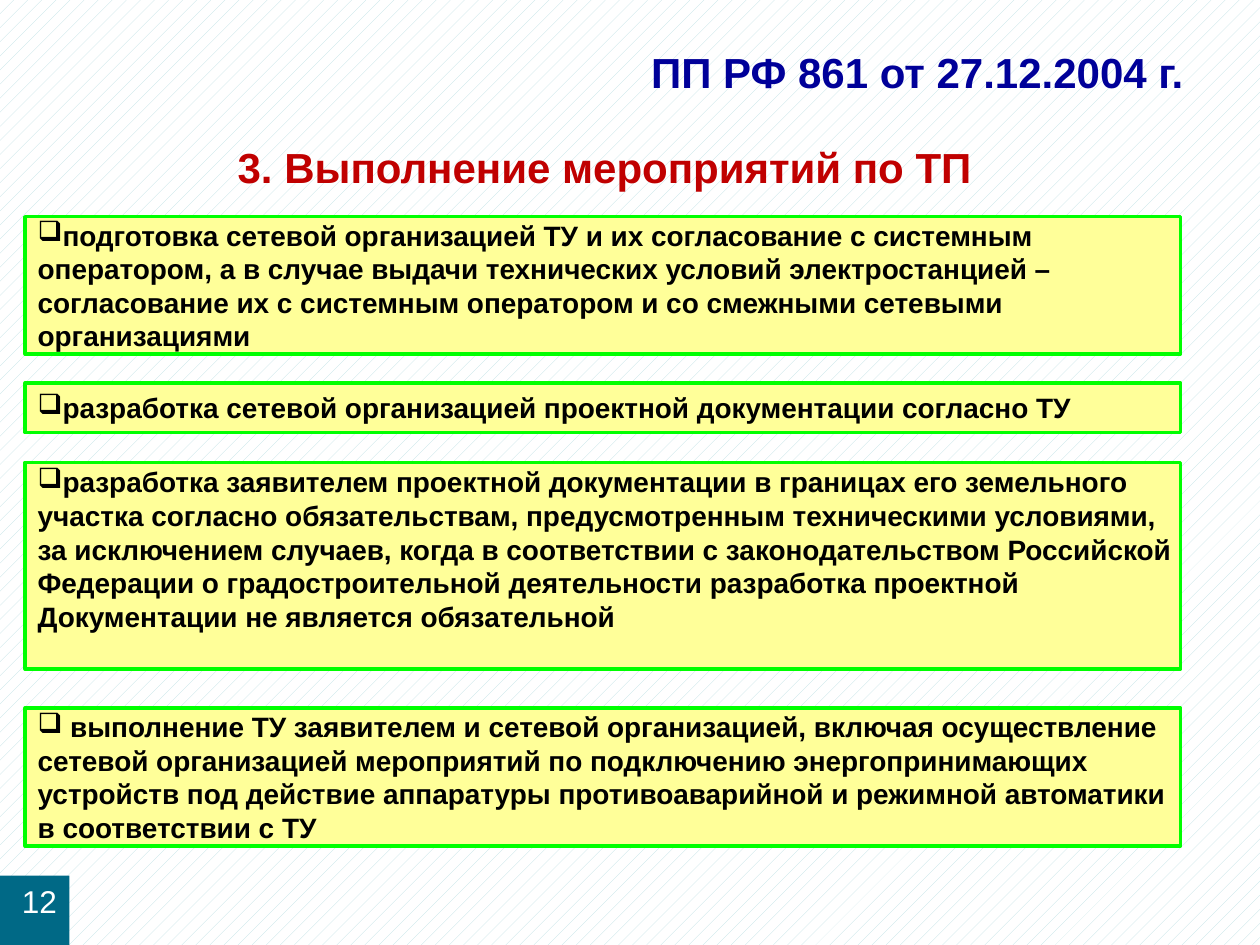
from lxml.etree import SubElement
from pptx import Presentation
from pptx.dml.color import RGBColor
from pptx.enum.dml import MSO_PATTERN
from pptx.enum.shapes import MSO_SHAPE
from pptx.enum.text import MSO_ANCHOR, PP_ALIGN
from pptx.oxml.ns import qn
from pptx.util import Cm, Pt

HEADS = [
    ("ПП РФ 861 от 27.12.2004 г.", 3.38, 0.79, 1.3, "000099", PP_ALIGN.RIGHT, MSO_ANCHOR.MIDDLE),
    ("3. Выполнение мероприятий по ТП", 1.7, 2.77, 1.22, "C00000", PP_ALIGN.CENTER, MSO_ANCHOR.BOTTOM),
]
STEPS = [
    (4.37, 2.77, 0.13, [
        "подготовка сетевой организацией ТУ и их согласование с системным",
        "оператором, а в случае выдачи технических условий электростанцией –",
        "согласование их с системным оператором и со смежными сетевыми",
        "организациями",
    ]),
    (7.72, 1, 0.13, [
        "разработка сетевой организацией проектной документации согласно ТУ",
    ]),
    (9.32, 4.17, 0.8, [
        "разработка заявителем проектной документации в границах его земельного",
        "участка согласно обязательствам, предусмотренным техническими условиями,",
        "за исключением случаев, когда в соответствии с законодательством Российской",
        "Федерации о градостроительной деятельности разработка проектной",
        "Документации не является обязательной",
    ]),
    (14.27, 2.79, 0.13, [
        " выполнение ТУ заявителем и сетевой организацией, включая осуществление",
        "сетевой организацией мероприятий по подключению энергопринимающих",
        "устройств под действие аппаратуры противоаварийной и режимной автоматики",
        "в соответствии с ТУ",
    ]),
]
NUM = "12"
LEFT, WIDE, SIDE = 0.51, 23.29, 1.4


def color(code):
    return RGBColor.from_string(code)


def write(frame, text, size, code, bold, align, anchor):
    frame.text = text
    frame.vertical_anchor = anchor
    for para in frame.paragraphs:
        para.alignment = align
        for run in para.runs:
            run.font.name = "Arial"
            run.font.size = Pt(size)
            run.font.bold = bold
            run.font.color.rgb = color(code)


def add_box(slide, x, y, w, h, fill, line=None):
    box = slide.shapes.add_shape(MSO_SHAPE.RECTANGLE, Cm(x), Cm(y), Cm(w), Cm(h))
    box.shadow.inherit = False
    box.fill.solid()
    box.fill.fore_color.rgb = color(fill)
    if line:
        box.line.color.rgb = color(line)
        box.line.width = Pt(2)
    else:
        box.line.fill.background()
    return box


def add_mark(para):
    props = para._p.get_or_add_pPr()
    SubElement(props, qn("a:buChar")).set("char", "❑")


def main():
    deck = Presentation()
    deck.slide_width, deck.slide_height = Cm(25.4), Cm(19.05)
    slide = deck.slides.add_slide(deck.slide_layouts[6])
    back = slide.background.fill
    back.patterned()
    back.pattern = MSO_PATTERN.PERCENT_10
    back.fore_color.rgb = color("BBE0E3")
    back.back_color.rgb = color("FFFFFF")

    for text, x, y, h, code, align, anchor in HEADS:
        frame = slide.shapes.add_textbox(Cm(x), Cm(y), Cm(20.98), Cm(h)).text_frame
        frame.word_wrap = True
        if align == PP_ALIGN.RIGHT:
            frame.margin_right = Cm(0.5)
        write(frame, text, 24, code, True, align, anchor)

    for y, h, foot, lines in STEPS:
        frame = add_box(slide, LEFT, y, WIDE, h, "FFFF99", "00FF00").text_frame
        frame.word_wrap = False
        frame.margin_bottom = Cm(foot)
        write(frame, "\n".join(lines), 16, "000000", True, PP_ALIGN.LEFT, MSO_ANCHOR.MIDDLE)
        add_mark(frame.paragraphs[0])

    page = add_box(slide, 0, 19.05 - SIDE, SIDE, SIDE, "006986")
    write(page.text_frame, NUM, 18, "FFFFFF", False, PP_ALIGN.RIGHT, MSO_ANCHOR.TOP)
    deck.save("out.pptx")


if __name__ == "__main__":
    main()
